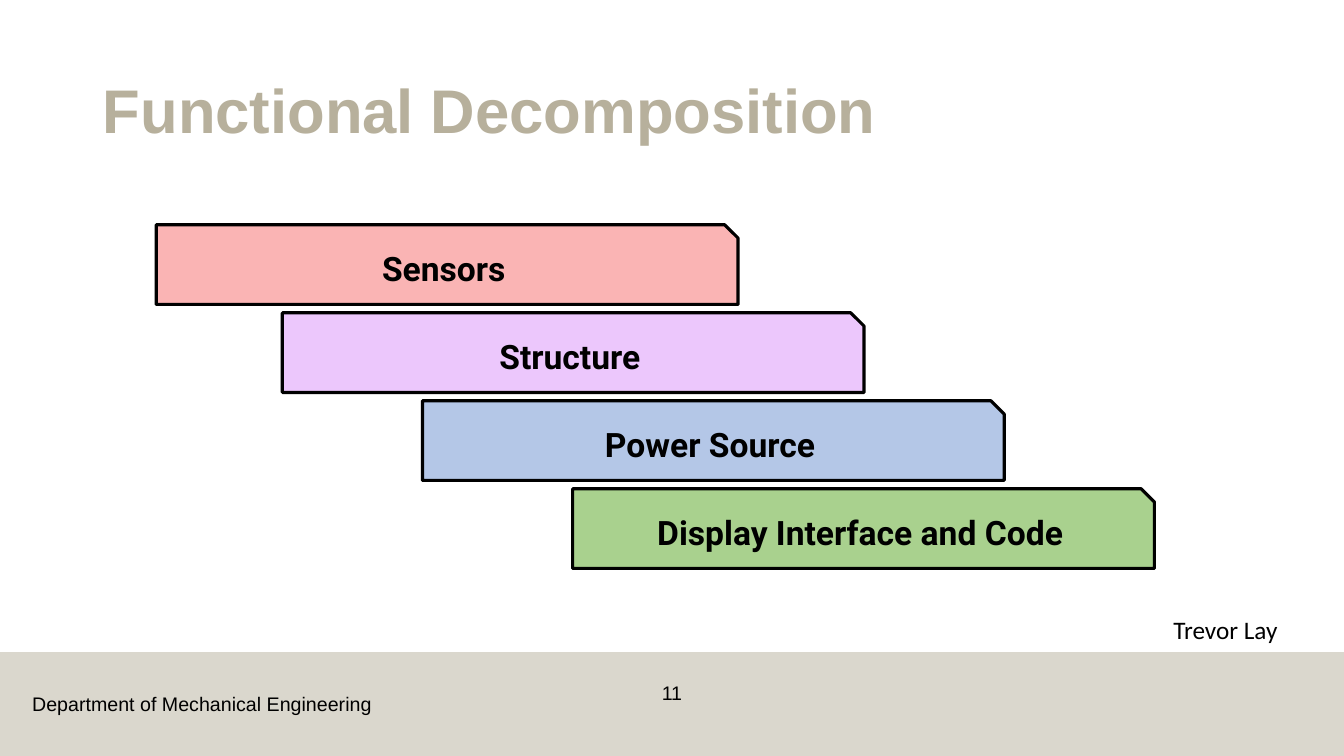
import pptx
import pptx.util
import pptx.dml.color
import pptx.enum.shapes
import pptx.enum.text
import pptx.oxml
import pptx.oxml.ns
from pptx.util import Inches

COLORS = {
    "black": "000000",
    "sand": "B7B09C",
    "red": "FAB4B4",
    "violet": "ECC7FC",
    "blue": "B4C7E7",
    "green": "A9D18E",
}
ALIGN = pptx.enum.text.PP_ALIGN
MIDDLE = pptx.enum.text.MSO_ANCHOR.MIDDLE
SHAPES = pptx.enum.shapes.MSO_SHAPE


def rgb(name):
    return pptx.dml.color.RGBColor.from_string(COLORS[name])


def write(shape, text, font, size, color="black", bold=False, align=ALIGN.LEFT):
    shape.text_frame.text = text
    para = shape.text_frame.paragraphs[0]
    para.alignment = align
    span = para.runs[0]
    span.font.name = font
    span.font.size = pptx.util.Pt(size)
    span.font.bold = bold
    span.font.color.rgb = rgb(color)


deck = pptx.Presentation()
deck.slide_width = Inches(13.33)
deck.slide_height = Inches(7.5)
page = deck.slides.add_slide(deck.slide_layouts[5])

# Title
title = page.shapes.title
title.left, title.top = Inches(0.92), Inches(0.4)
title.width, title.height = Inches(11.5), Inches(1.45)
write(title, "Functional Decomposition", "Arial", 44, "sand", bold=True)
title.text_frame.vertical_anchor = MIDDLE
title.text_frame.paragraphs[0].line_spacing = 0.9

# Half-transparent footer band
band = page.shapes.add_shape(
    SHAPES.RECTANGLE, 0, Inches(6.47), deck.slide_width, Inches(1.03))
band.shadow.inherit = False
band.line.fill.background()
band.fill.solid()
band.fill.fore_color.rgb = rgb("sand")
band_color = band.fill._xPr.find(".//" + pptx.oxml.ns.qn("a:srgbClr"))
alpha = pptx.oxml.parse_xml(
    '<a:alpha %s val="50000"/>' % pptx.oxml.ns.nsdecls("a"))
band_color.append(alpha)

# Staircase of functions
functions = [
    ("Sensors", 1.55, "red"),
    ("Structure", 2.8, "violet"),
    ("Power Source", 4.19, "blue"),
    ("Display Interface and Code", 5.68, "green"),
]
for row, (name, left, color) in enumerate(functions):
    step = page.shapes.add_shape(
        SHAPES.SNIP_1_RECTANGLE, Inches(left), Inches(2.23 + 0.873 * row),
        Inches(5.77), Inches(0.79))
    step.shadow.inherit = False
    step.fill.solid()
    step.fill.fore_color.rgb = rgb(color)
    step.line.color.rgb = rgb("black")
    step.line.width = pptx.util.Pt(2.25)
    step.text_frame.vertical_anchor = MIDDLE
    write(step, name, "Roboto", 24, bold=True, align=ALIGN.CENTER)

# Department, slide number and presenter
labels = [
    ("Department of Mechanical Engineering", 0.22, 6.82, 3.59, 0.34, "Arial", 14, ALIGN.LEFT, False),
    ("11", 6.28, 6.71, 0.77, 0.4, "Arial", 14, ALIGN.CENTER, True),
    ("Trevor Lay", 11.54, 6.05, 1.8, 0.4, "Calibri", 18, ALIGN.LEFT, True),
]
for text, left, top, width, height, font, size, align, wrap in labels:
    box = page.shapes.add_textbox(
        Inches(left), Inches(top), Inches(width), Inches(height))
    box.text_frame.word_wrap = wrap
    write(box, text, font, size, align=align)

deck.save("out.pptx")
